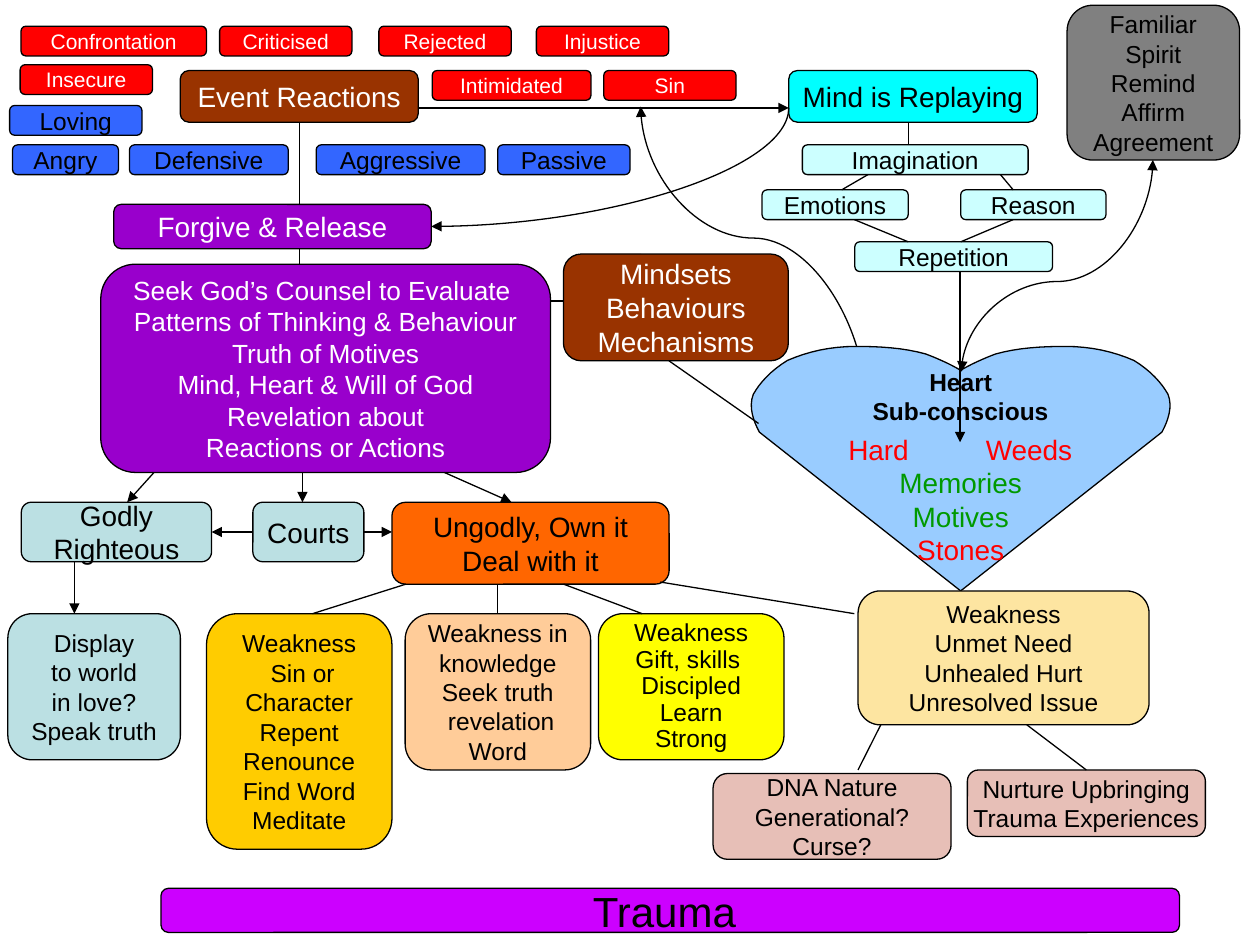
from dataclasses import dataclass
from typing import NamedTuple, Optional

from lxml.etree import SubElement
from pptx import Presentation
from pptx.dml.color import RGBColor
from pptx.enum.shapes import MSO_CONNECTOR, MSO_SHAPE
from pptx.enum.text import MSO_ANCHOR, PP_ALIGN
from pptx.oxml.ns import qn
from pptx.util import Pt


@dataclass(frozen=True)
class Theme:
    font: str = "Arial"
    black: str = "000000"
    white: str = "FFFFFF"
    brown: str = "993300"
    red: str = "FF0000"
    blue: str = "3366FF"
    cyan: str = "00FFFF"
    ice: str = "CCFFFF"
    grey: str = "808080"
    sky: str = "99CCFF"
    green: str = "009900"
    purple: str = "9900CC"
    teal: str = "BBE0E3"
    orange: str = "FF6600"
    gold: str = "FFCC00"
    peach: str = "FFCC99"
    yellow: str = "FFFF00"
    cream: str = "FDE5A1"
    pink: str = "E7BFB7"
    magenta: str = "CC00FF"
    tag: int = 12
    body: int = 14
    counsel: int = 15
    head: int = 16
    banner: int = 24
    line: float = 0.75
    bold: float = 1


T = Theme()


class Box(NamedTuple):
    text: str
    x: float
    y: float
    w: float
    h: float
    fill: str
    size: int = T.body
    color: str = T.black
    pitch: Optional[float] = None  # line spacing


class Link(NamedTuple):
    x1: float
    y1: float
    x2: float
    y2: float
    ends: str = ""  # "h" arrow at start, "t" arrow at end
    width: float = T.line
    begin: Optional[tuple[str, int]] = None
    end: Optional[tuple[str, int]] = None


class Curve(NamedTuple):
    x: float  # frame before turning
    y: float
    w: float
    h: float
    turn: int
    flip: bool
    ends: str
    bend: Optional[float] = None


def rgb(code: str) -> RGBColor:
    return RGBColor.from_string(code)


def paint(shape, fill: str) -> None:
    shape.shadow.inherit = False
    shape.fill.solid()
    shape.fill.fore_color.rgb = rgb(fill)
    shape.line.color.rgb = rgb(T.black)
    shape.line.width = Pt(T.line)


def style(para, size: int, color: str, bold: bool = False) -> None:
    para.alignment = PP_ALIGN.CENTER
    font = para.font
    font.name, font.size, font.bold = T.font, Pt(size), bold
    font.color.rgb = rgb(color)


def frame(shape, text: str):
    body = shape.text_frame
    body.margin_left = body.margin_right = Pt(0)
    body.margin_top = body.margin_bottom = Pt(0)
    body.word_wrap = False
    body.vertical_anchor = MSO_ANCHOR.MIDDLE
    body.text = text
    return body


def draw_box(shapes, box: Box):
    shape = shapes.add_shape(MSO_SHAPE.FLOWCHART_ALTERNATE_PROCESS,
                             Pt(box.x), Pt(box.y), Pt(box.w), Pt(box.h))
    paint(shape, box.fill)
    for para in frame(shape, box.text).paragraphs:
        style(para, box.size, box.color)
        para.line_spacing = box.pitch
    return shape


def finish(wire, ends: str, width: float) -> None:
    wire.line.color.rgb = rgb(T.black)
    wire.line.width = Pt(width)
    stroke = wire.line._get_or_add_ln()
    for key, tag in (("h", "a:headEnd"), ("t", "a:tailEnd")):
        if key in ends:
            SubElement(stroke, qn(tag), type="triangle")
    SubElement(wire._element.spPr, qn("a:effectLst"))


def draw_link(shapes, link: Link, made: dict) -> None:
    wire = shapes.add_connector(MSO_CONNECTOR.STRAIGHT, Pt(link.x1), Pt(link.y1),
                                Pt(link.x2), Pt(link.y2))
    if link.begin:
        wire.begin_connect(made[link.begin[0]], link.begin[1])
    if link.end:
        wire.end_connect(made[link.end[0]], link.end[1])
    finish(wire, link.ends, link.width)


def draw_curve(shapes, c: Curve) -> None:
    left, right = (c.x + c.w, c.x) if c.flip else (c.x, c.x + c.w)
    wire = shapes.add_connector(MSO_CONNECTOR.CURVE, Pt(left), Pt(c.y),
                                Pt(right), Pt(c.y + c.h))
    props = wire._element.spPr
    props.find(qn("a:xfrm")).set("rot", str(c.turn * 60000))
    geom = props.find(qn("a:prstGeom"))
    if c.bend is None:
        geom.set("prst", "curvedConnector2")
    else:
        SubElement(geom.find(qn("a:avLst")), qn("a:gd"), name="adj1",
                   fmla=f"val {round(c.bend * 100000)}")
    finish(wire, c.ends, T.line)


def bezier(a, b, c, d, steps: int = 8) -> list:
    spots = []
    for i in range(1, steps + 1):
        t = i / steps
        k = ((1 - t) ** 3, 3 * t * (1 - t) ** 2, 3 * t * t * (1 - t), t ** 3)
        spots.append(tuple(sum(m * p[n] for m, p in zip(k, (a, b, c, d)))
                           for n in (0, 1)))
    return spots


def draw_heart(shapes) -> None:
    mid, dip, tip = 549, (549, 211.7), (549, 337.7)
    arcs = [((545, 209), (535, 204.5), (529, 202.3)),
            ((516, 198.7), (502.5, 198), (489, 198)),
            ((474.5, 198), (461.5, 201), (450, 206)),
            ((440.6, 211.7), (434, 219), (430.5, 225.4)),
            ((427.7, 232.5), (430.5, 240.5), (434, 247))]
    half = [dip]
    for arc in arcs:
        half += bezier(half[-1], *arc)
    mirror = [(2 * mid - x, y) for x, y in reversed(half[1:])]
    pen = shapes.build_freeform(Pt(dip[0]), Pt(dip[1]))
    pen.add_line_segments([(Pt(x), Pt(y)) for x, y in half[1:] + [tip] + mirror])
    heart = pen.convert_to_shape()
    paint(heart, T.sky)
    body = frame(heart, "Heart\nSub-conscious\nMemories\nMotives\nStones")
    body.vertical_anchor, body.margin_top = MSO_ANCHOR.TOP, Pt(11.5)
    looks = [(T.body, T.black, True)] * 2 + [(T.head, T.green)] * 2 + [(T.head, T.red)]
    for para, look in zip(body.paragraphs, looks):
        style(para, *look)
    body.paragraphs[2].space_before = Pt(23)
    # Pair of words side by side
    for word, x in (("Hard", 502), ("Weeds", 588)):
        label = shapes.add_textbox(Pt(x - 30), Pt(246.5), Pt(60), Pt(20))
        style(frame(label, word).paragraphs[0], T.head, T.red)


# Small tags: text, left, top, width
REDS = [("Confrontation", 12, 15, 106), ("Criticised", 125.5, 15, 75.6),
        ("Rejected", 216.5, 15, 75.6), ("Injustice", 306.5, 15, 75.6),
        ("Insecure", 11.5, 37, 75.6), ("Intimidated", 247, 40.3, 90.7),
        ("Sin", 345, 40.3, 75.6)]
BLUES = [("Loving", 5.5, 60.3, 75.6), ("Angry", 7.2, 82.8, 60.5),
         ("Defensive", 74, 82.8, 90.7), ("Aggressive", 180.7, 82.8, 96.5),
         ("Passive", 284.4, 82.8, 75.6)]
ICES = [("Imagination", 458.5, 82.8, 129), ("Emotions", 435.5, 108.5, 83.5),
        ("Reason", 549, 108.5, 83), ("Repetition", 488.5, 138.2, 113)]
TAG_H = 17

BOXES = [Box(*tag, TAG_H, T.red, T.tag, T.white) for tag in REDS]
BOXES += [Box(*tag, TAG_H, T.blue) for tag in BLUES]
BOXES += [Box(*tag, TAG_H, T.ice) for tag in ICES]
BOXES += [
    Box("Event Reactions", 103, 40.3, 136, 29.5, T.brown, T.head, T.white),
    Box("Mind is Replaying", 450.7, 40.3, 142, 29.5, T.cyan, T.head),
    Box("Familiar\nSpirit\nRemind\nAffirm\nAgreement", 609.8, 3, 98.6, 88.5, T.grey),
    Box("Forgive & Release", 65, 116.8, 181.4, 25.3, T.purple, T.head, T.white),
    Box("Seek God’s Counsel to Evaluate \nPatterns of Thinking & Behaviour\n"
        "Truth of Motives\nMind, Heart & Will of God\nRevelation about\n"
        "Reactions or Actions", 57.6, 151, 257, 119, T.purple, T.counsel, T.white),
    Box("Mindsets\nBehaviours\nMechanisms", 322, 145.2, 128.5, 61, T.brown, T.head, T.white),
    Box("Godly\nRighteous", 12.2, 287, 108.7, 34, T.teal, T.head),
    Box("Courts", 144.5, 287, 63.4, 34, T.teal, T.head),
    Box("Ungodly, Own it\nDeal with it", 224, 287, 158.4, 46.8, T.orange, T.head),
    Box("Display\n to world \nin love?\nSpeak truth", 4.5, 350.7, 98.6, 83.5, T.teal),
    Box("Weakness\n Sin or\nCharacter\nRepent\nRenounce\nFind Word\nMeditate",
        118, 350.7, 106, 134.6, T.gold),
    Box("Weakness in\nknowledge\nSeek truth\n revelation\nWord", 231.5, 350.7, 106, 89.3, T.peach),
    Box("Weakness\nGift, skills \nDiscipled\nLearn\nStrong", 342, 350.7, 106, 83.5, T.yellow,
        pitch=0.9),
    Box("Weakness\nUnmet Need\nUnhealed Hurt\nUnresolved Issue", 490.3, 337.7, 166.3, 76.5, T.cream),
    Box("DNA Nature\nGenerational?\nCurse?", 407.5, 442, 136, 49, T.pink),
    Box("Nurture Upbringing\nTrauma Experiences", 552.8, 440, 136, 38, T.pink),
    Box("Trauma ", 92, 507.6, 582, 25.2, T.magenta, T.banner),
]

LINKS = [
    # Events, mind and forgiveness
    Link(239, 61.7, 450.7, 61.7, "t"),
    Link(171, 69.8, 171, 116.8, begin=("Event Reactions", 2)),
    Link(171, 142.1, 171, 151),
    Link(322, 172, 314.6, 172),
    Link(433.5, 242, 382.3, 206.2),
    # Replaying chain down to the heart
    Link(519, 69.8, 519, 82.8),
    Link(496, 99.8, 481, 108.5),
    Link(571.7, 99.8, 579, 108.5),
    Link(579, 125.5, 549, 138.2),
    Link(488.2, 125.5, 519, 138.2),
    Link(548.6, 155.2, 548.6, 252.7, "t"),
    # Counsel to its outcomes
    Link(254, 270, 292.3, 287, "t"),
    Link(88, 270, 72.7, 287, "t"),
    Link(172.8, 270, 172.8, 287, "t", T.bold),
    Link(120.9, 304, 144.5, 304, "h", T.bold, ("Godly", 3), ("Courts", 1)),
    Link(207.9, 304, 224, 304, "t", T.bold, ("Courts", 3)),
    Link(42.5, 321, 42.5, 350.7, "t"),
    # Ungodly to weaknesses
    Link(232, 333.8, 178.6, 350.7),
    Link(284.5, 333.8, 284.5, 350.7, end=("Weakness in", 0)),
    Link(322, 333.8, 367, 350.7),
    Link(377.3, 332.6, 488.2, 350.7),
    # Unmet need to its roots
    Link(503.3, 414.2, 490.3, 440),
    Link(586.8, 414.2, 620.8, 440, end=("Nurture Upbringing", 0)),
]

SIN = Curve(344.2, 82.8, 172.8, 128.9, 90, True, "t", 0.565)
SPIRIT = Curve(543.6, 97.2, 121, 109.4, 270, False, "ht", 0.426)
FORGIVE = Curve(314.7, -6.6, 67.7, 204.3, 90, False, "t")


def main() -> None:
    deck = Presentation()
    deck.slide_width, deck.slide_height = Pt(720), Pt(540)
    shapes = deck.slides.add_slide(deck.slide_layouts[6]).shapes
    # Heart hides the lower end of the sin curve
    draw_curve(shapes, SIN)
    draw_heart(shapes)
    made = {box.text.split("\n")[0]: draw_box(shapes, box) for box in BOXES}
    for link in LINKS:
        draw_link(shapes, link, made)
    for curve in (SPIRIT, FORGIVE):
        draw_curve(shapes, curve)
    deck.save("out.pptx")


if __name__ == "__main__":
    main()
